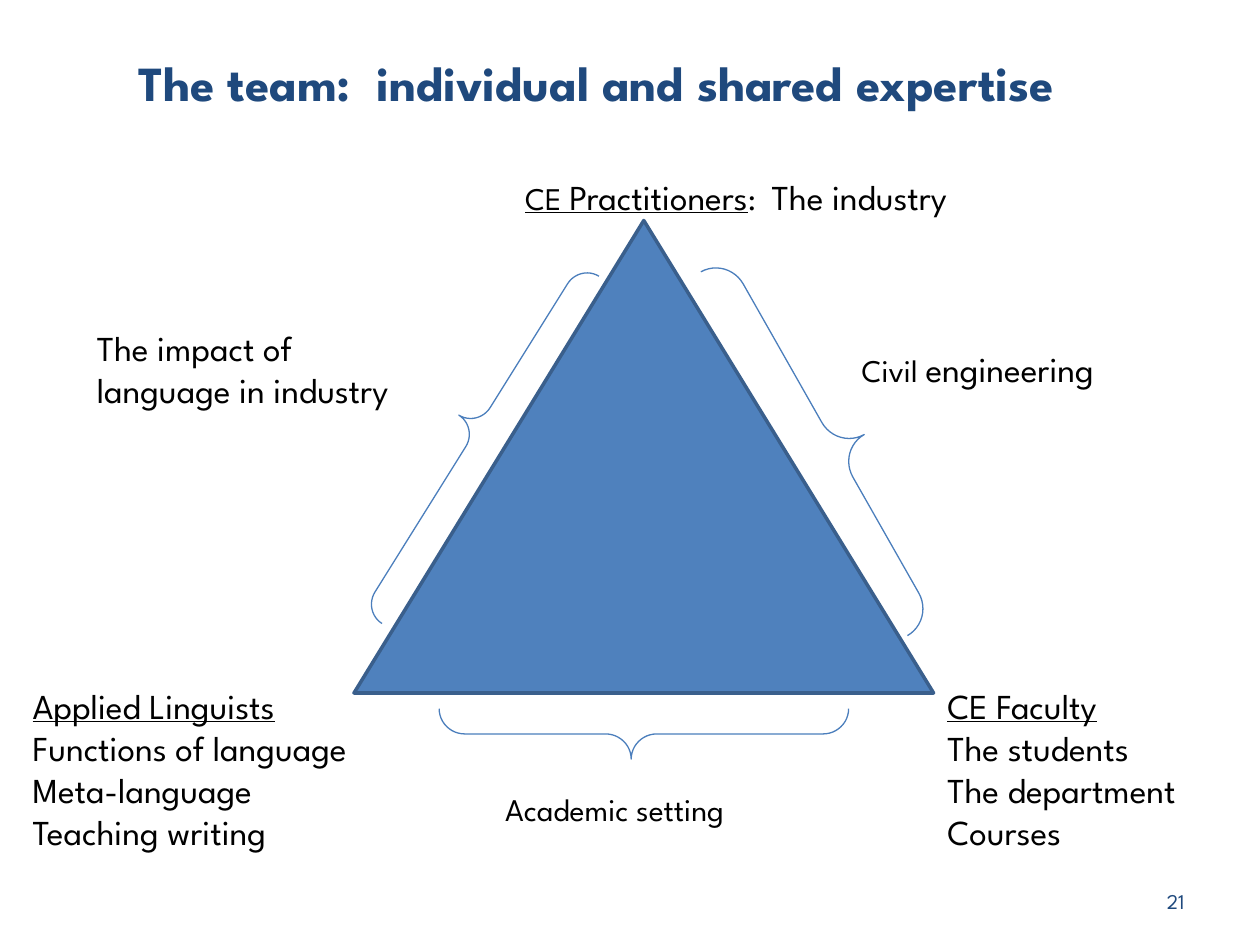
"""Build a slide showing a team triangle with individual and shared expertise."""
from pptx import Presentation
from pptx.dml.color import RGBColor
from pptx.enum.shapes import MSO_SHAPE
from pptx.enum.text import MSO_ANCHOR, PP_ALIGN
from pptx.util import Inches, Pt

TRIANGLE, BRACE = MSO_SHAPE.ISOSCELES_TRIANGLE, MSO_SHAPE.RIGHT_BRACE
LEFT, RIGHT = PP_ALIGN.LEFT, PP_ALIGN.RIGHT
TOP, MIDDLE = MSO_ANCHOR.TOP, MSO_ANCHOR.MIDDLE

FONT = "League Spartan"
COLORS = {
    "heading": "1F497D",
    "body": "000000",
    "triangle": "4F81BD",
    "triangle_edge": "3A5F8C",
    "brace": "4B7EBC",
}

TITLE = ((1, 0.37, 8.22, 0.57), "The team:  individual and shared expertise")
PAGE_NUMBER = ((7.17, 6.95, 2.33, 0.4), "21")
TRIANGLE_AREA = (2.81, 1.75, 4.6, 3.75)

BRACE_ADJUSTMENTS = (0.509, 0.531)
BRACES = [
    ((6.35, 1.82, 0.49, 3.32), 330.4),
    ((3.56, 1.85, 0.36, 3.25), 212),
    ((4.91, 4.2, 0.4, 3.25), 90),
]

CORNER_LISTS = [
    ((7.42, 5.38, 2.58, 1.45), "CE Faculty",
     ["The students", "The department", "Courses"]),
    ((0.16, 5.38, 3.32, 1.45), "Applied Linguists",
     ["Functions of language", "Meta-language", "Teaching writing"]),
]

LABELS = [
    ((4.07, 1.34, 4.3, 0.44),
     [[("CE ", 18, True), ("Practitioners", 20, True),
       (":  ", 18, False), ("The industry", 20, False)]]),
    ((6.74, 2.71, 2.42, 0.44),
     [[("Civil ", 18, False), ("engineering", 20, False)]]),
    ((3.91, 6.22, 2.42, 0.42), [[("Academic setting", 18, False)]]),
    ((0.67, 2.54, 3.16, 0.77),
     [[("The impact of", 20, False)], [("language in industry", 20, False)]]),
]


def color(name):
    return RGBColor.from_string(COLORS[name])


def add_text(page, area, lines, ink="body", bold=False, align=LEFT, anchor=TOP):
    """Add lines of (text, size, underlined) runs in one text box."""
    frame = page.shapes.add_textbox(*map(Inches, area)).text_frame
    frame.word_wrap = True
    frame.vertical_anchor = anchor
    for index, line in enumerate(lines):
        para = frame.add_paragraph() if index else frame.paragraphs[0]
        para.alignment = align
        for text, size, underlined in line:
            span = para.add_run()
            span.text = text
            span.font.name = FONT
            span.font.size = Pt(size)
            span.font.bold = bold
            span.font.underline = underlined
            span.font.color.rgb = color(ink)


def add_outline(page, kind, area, edge, width):
    """Add a preset shape with a plain outline and no shadow."""
    shape = page.shapes.add_shape(kind, *map(Inches, area))
    shape.shadow.inherit = False
    shape.line.color.rgb = color(edge)
    shape.line.width = Pt(width)
    return shape


def main():
    """Place the triangle, its braces and all the text."""
    deck = Presentation()
    deck.slide_width, deck.slide_height = Inches(10), Inches(7.5)
    page = deck.slides.add_slide(deck.slide_layouts[6])

    area, text = TITLE
    add_text(page, area, [[(text, 28, False)]], "heading", bold=True)
    area, text = PAGE_NUMBER
    add_text(page, area, [[(text, 12, False)]], "heading", align=RIGHT, anchor=MIDDLE)

    triangle = add_outline(page, TRIANGLE, TRIANGLE_AREA, "triangle_edge", 2)
    triangle.fill.solid()
    triangle.fill.fore_color.rgb = color("triangle")

    for area, angle in BRACES:
        brace = add_outline(page, BRACE, area, "brace", 0.75)
        brace.fill.background()
        brace.rotation = angle
        for index, value in enumerate(BRACE_ADJUSTMENTS):
            brace.adjustments[index] = value

    for area, heading, items in CORNER_LISTS:
        lines = [[(heading, 20, True)]] + [[(item, 20, False)] for item in items]
        add_text(page, area, lines)
    for area, lines in LABELS:
        add_text(page, area, lines)

    deck.save("out.pptx")


if __name__ == "__main__":
    main()
